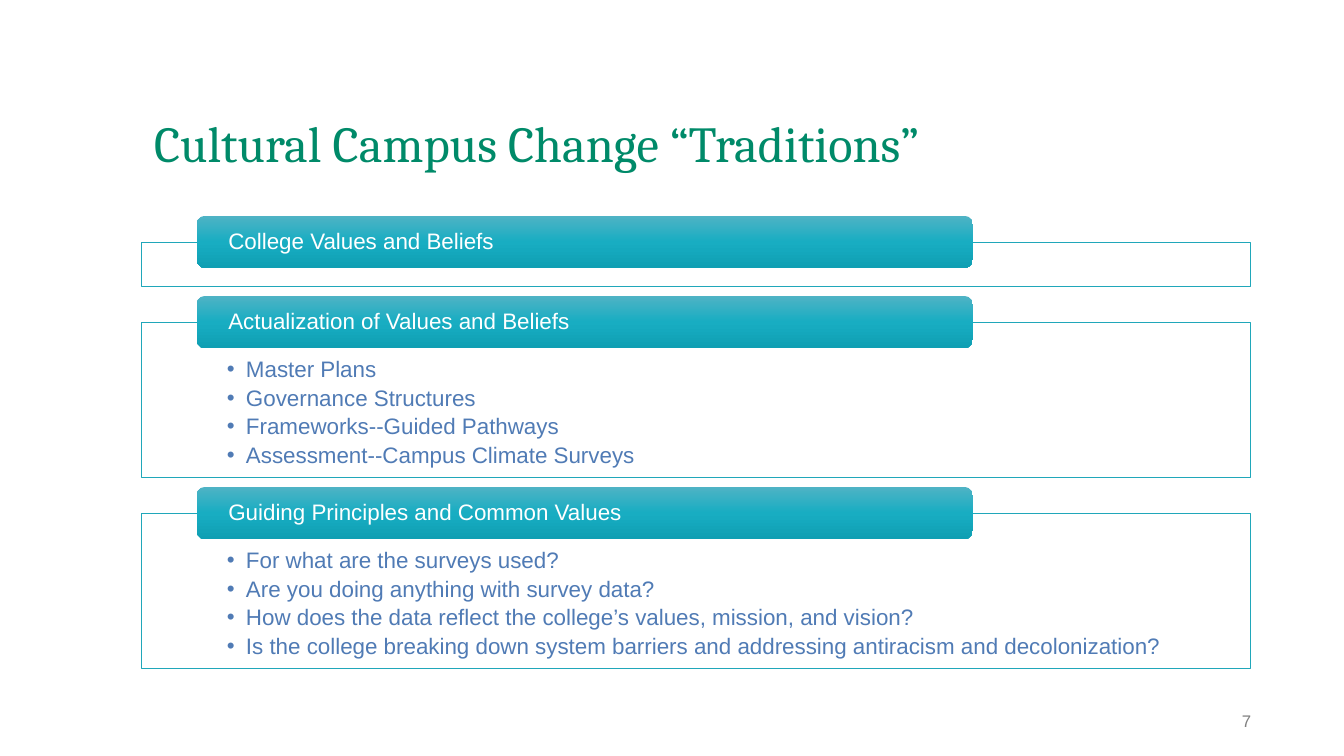
from copy import deepcopy

from lxml.etree import SubElement
from pptx import Presentation
from pptx.dml.color import RGBColor
from pptx.enum.shapes import MSO_SHAPE
from pptx.enum.text import MSO_ANCHOR, PP_ALIGN
from pptx.oxml.ns import qn
from pptx.util import Inches, Pt

GREEN = RGBColor(0x00, 0x8A, 0x69)
GRAY = RGBColor(0x80, 0x80, 0x80)
WHITE = RGBColor(0xFF, 0xFF, 0xFF)
TEAL = RGBColor(0x20, 0xA7, 0xBA)
BLUE = RGBColor(0x50, 0x7B, 0xB5)
HEADER_STOPS = [
    (0, RGBColor(0x4F, 0xB3, 0xC5)),
    (0.5, RGBColor(0x18, 0xAD, 0xC2)),
    (1, RGBColor(0x0F, 0x9F, 0xB3)),
]

SECTIONS = [
    ("College Values and Beliefs", []),
    ("Actualization of Values and Beliefs", [
        "Master Plans",
        "Governance Structures",
        "Frameworks--Guided Pathways",
        "Assessment--Campus Climate Surveys",
    ]),
    ("Guiding Principles and Common Values", [
        "For what are the surveys used?",
        "Are you doing anything with survey data?",
        "How does the data reflect the college’s values, mission, and vision?",
        "Is the college breaking down system barriers and addressing antiracism and decolonization?",
    ]),
]

deck = Presentation()
deck.slide_width, deck.slide_height = Inches(13.33), Inches(7.5)
page = deck.slides.add_slide(deck.slide_layouts[6])

# The grid has 100 columns and 100 rows
COLUMN, ROW = deck.slide_width / 100, deck.slide_height / 100
FRAME_LEFT, FRAME_WIDTH = 10.5, 82.5
HEADER_LEFT, HEADER_WIDTH, HEADER_HEIGHT = 14.63, 57.76, 6.93
EMPTY_HEIGHT, LIST_HEIGHT, FRAME_GAP = 5.87, 20.53, 4.73


def place(left, top, width, height):
    """Turn grid columns and rows into slide lengths."""
    return (round(left * COLUMN), round(top * ROW),
            round(width * COLUMN), round(height * ROW))


def write(shape, lines, size, color, anchor, insets, font="Arial",
          align=PP_ALIGN.LEFT, spacing=0.9, after=0, bullet=False):
    """Fill a shape with equally styled paragraphs; insets in inches."""
    frame = shape.text_frame
    frame.word_wrap = True
    frame.vertical_anchor = anchor
    (frame.margin_left, frame.margin_top,
     frame.margin_right, frame.margin_bottom) = map(Inches, insets)
    frame.text = "\n".join(lines)
    for para in frame.paragraphs:
        para.alignment = align
        para.line_spacing = spacing
        para.space_after = Pt(after)
        if bullet:
            properties = para._p.get_or_add_pPr()
            properties.set("marL", str(Inches(0.19)))
            properties.set("indent", str(-Inches(0.19)))
            SubElement(properties, qn("a:buFont"), typeface="Arial")
            SubElement(properties, qn("a:buChar"), char="•")
        para.font.size = Pt(size)
        para.font.name = font
        para.font.color.rgb = color


title = page.shapes.add_textbox(*place(FRAME_LEFT, 5.33, FRAME_WIDTH, 19.33))
write(title, ["Cultural Campus Change “Traditions”"], 36, GREEN,
      MSO_ANCHOR.BOTTOM, [0.13] * 4, font="Cambria")

page_number = page.shapes.add_textbox(*place(85.6, 92.67, 7.5, 5.33))
write(page_number, ["7"], 12, GRAY, MSO_ANCHOR.MIDDLE, [0.1, 0.05, 0, 0.05],
      align=PP_ALIGN.RIGHT, spacing=1)

top = 32
for heading, points in SECTIONS:
    height = LIST_HEIGHT if points else EMPTY_HEIGHT
    box = page.shapes.add_shape(
        MSO_SHAPE.RECTANGLE, *place(FRAME_LEFT, top, FRAME_WIDTH, height))
    box.shadow.inherit = False
    box.fill.solid()
    box.fill.fore_color.rgb = WHITE
    box.line.color.rgb = TEAL
    box.line.width = Pt(0.5)
    if points:
        write(box, points, 16, BLUE, MSO_ANCHOR.TOP, [0.85, 0.36, 0.85, 0.12],
              after=3.1, bullet=True)

    header = page.shapes.add_shape(
        MSO_SHAPE.ROUNDED_RECTANGLE,
        *place(HEADER_LEFT, top - HEADER_HEIGHT / 2, HEADER_WIDTH, HEADER_HEIGHT))
    header.shadow.inherit = False
    header.line.fill.background()
    header.fill.gradient()
    header.fill.gradient_angle = 270
    stop_list = header._element.spPr.find(qn("a:gradFill")).find(qn("a:gsLst"))
    stop_list.insert(1, deepcopy(stop_list[0]))
    for stop, (position, color) in zip(header.fill.gradient_stops, HEADER_STOPS):
        stop.position = position
        stop.color.rgb = color
    write(header, [heading], 16, WHITE, MSO_ANCHOR.MIDDLE, [0.29, 0, 0.29, 0])
    top += height + FRAME_GAP

deck.save("out.pptx")
